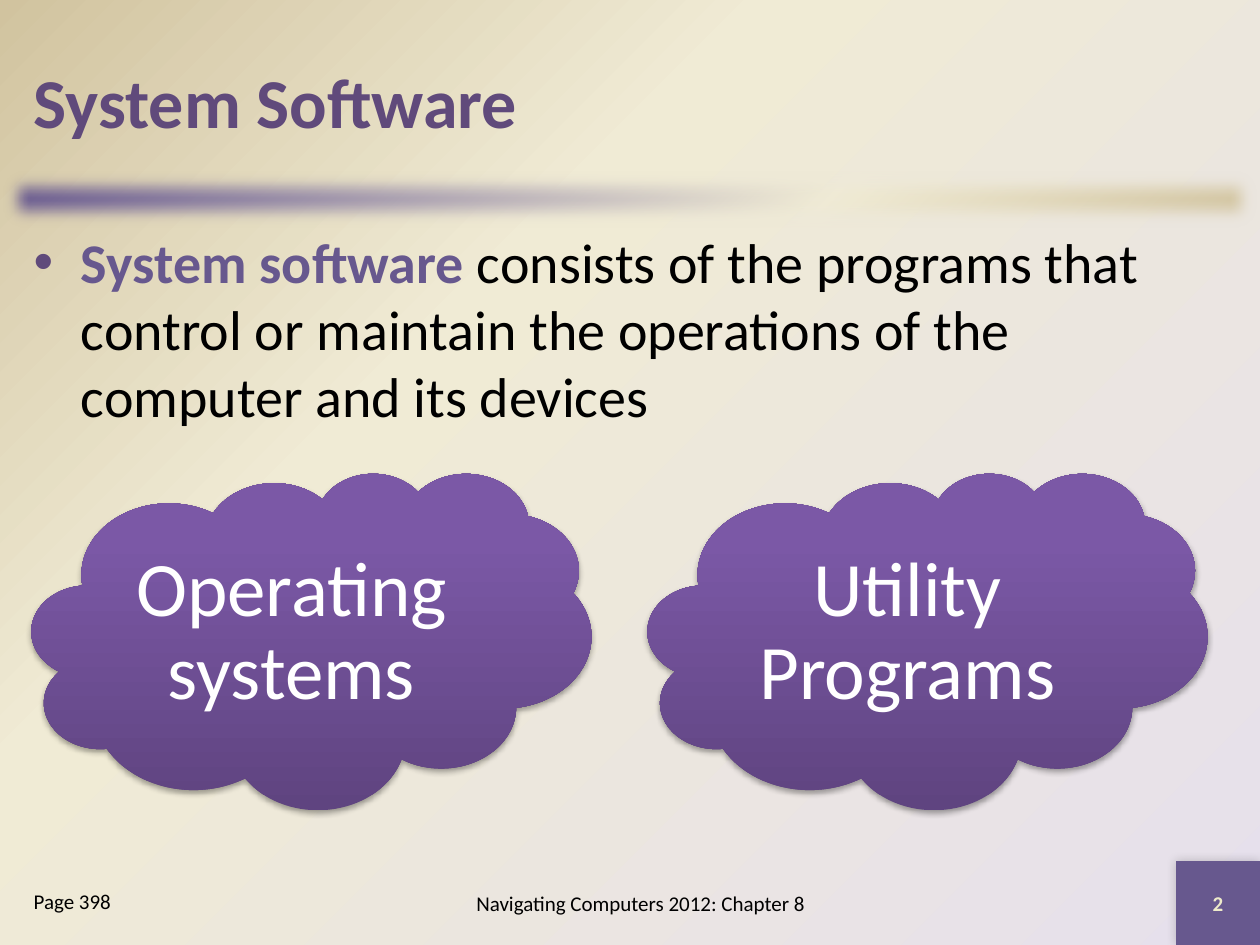
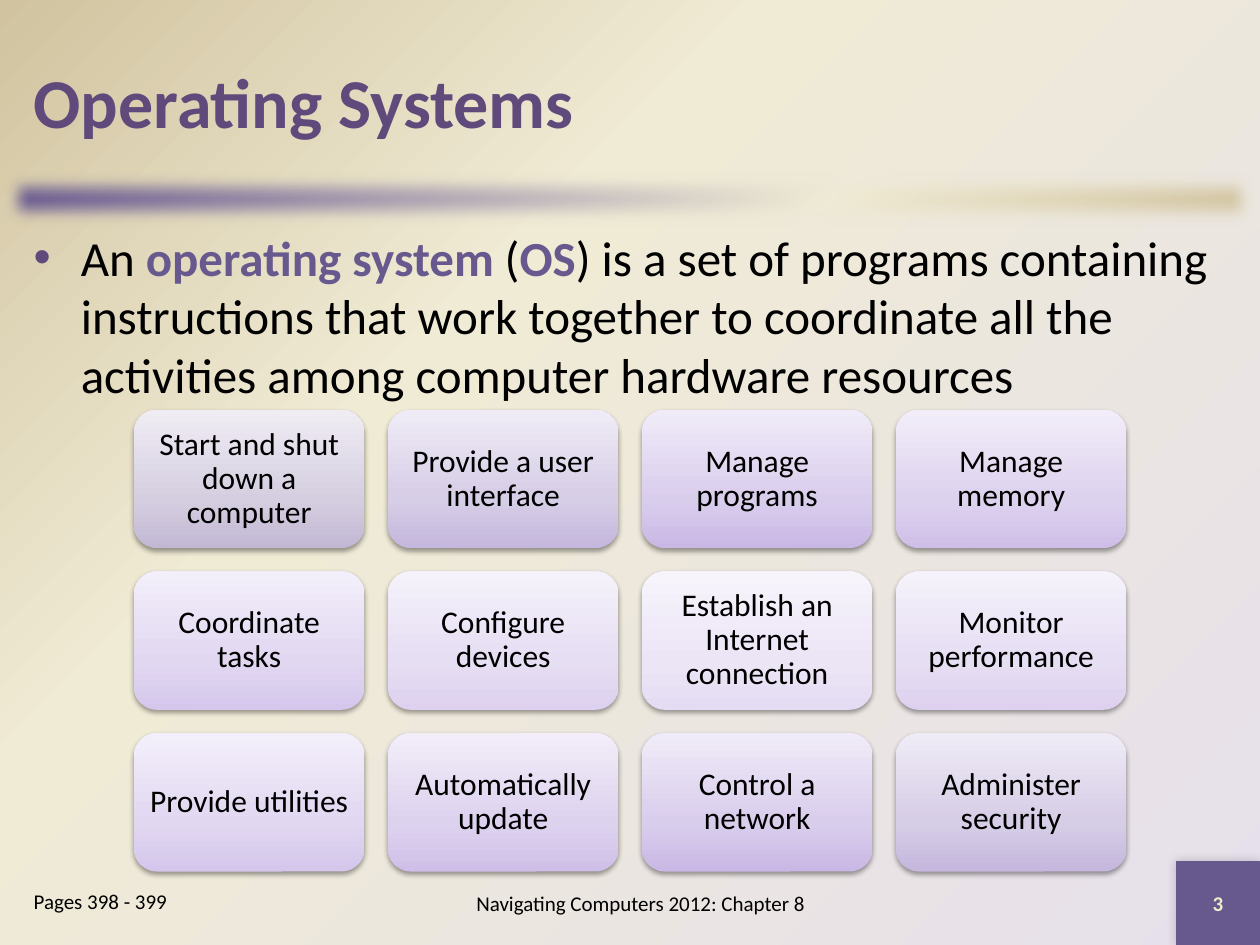
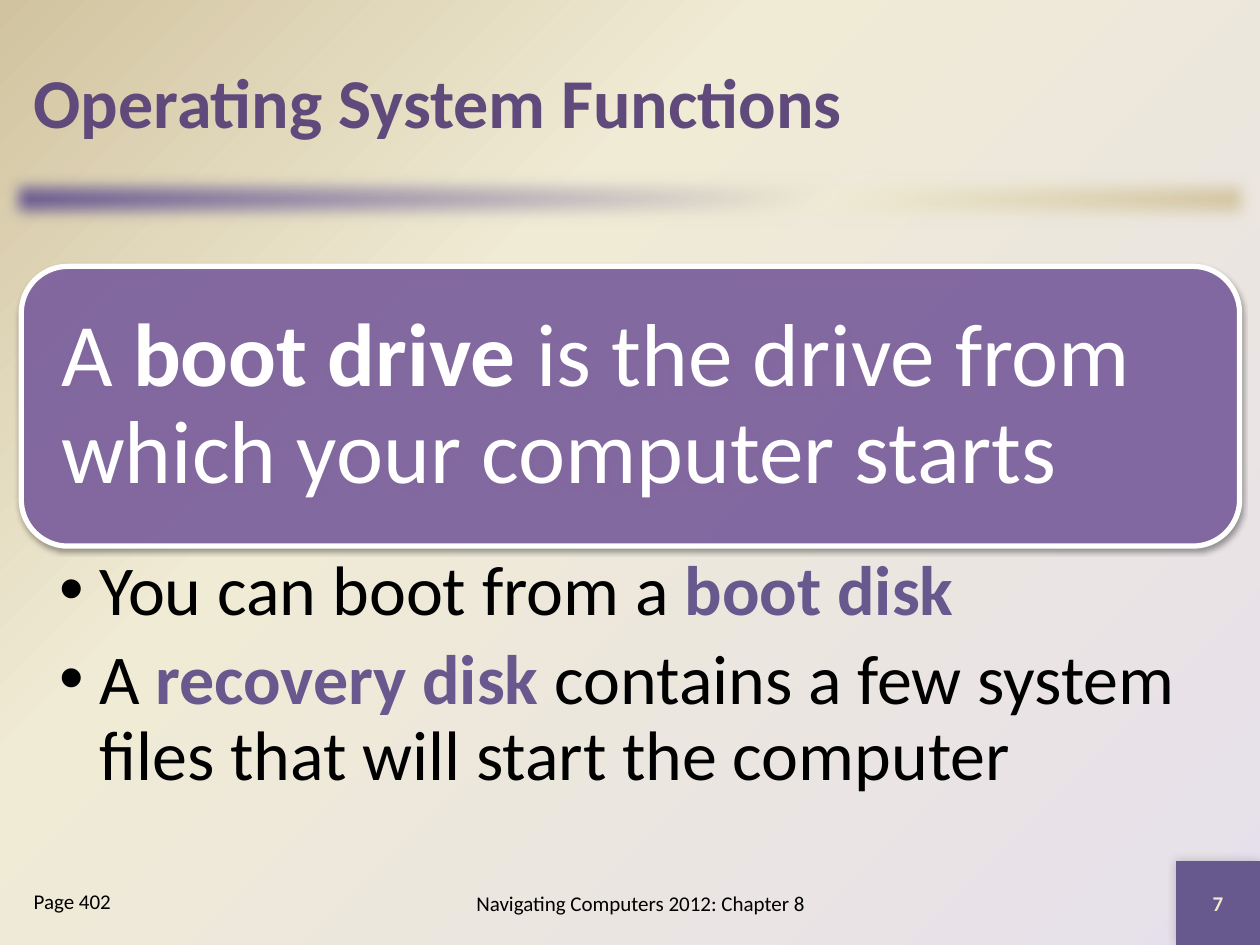
from dataclasses import dataclass
from typing import Optional

import lxml.etree
import pptx
import pptx.dml.color
import pptx.dml.fill
import pptx.enum.shapes
import pptx.enum.text
import pptx.oxml
import pptx.oxml.ns
import pptx.presentation
import pptx.shapes.autoshape
import pptx.shapes.base
import pptx.slide
import pptx.util

Cm = pptx.util.Cm
Pt = pptx.util.Pt
PRESET = pptx.enum.shapes.MSO_SHAPE
ALIGN = pptx.enum.text.PP_ALIGN
ANCHOR = pptx.enum.text.MSO_ANCHOR

FONT = "Calibri"
BLACK, WHITE, CREAM = "000000", "FFFFFF", "EEEBCA"
TITLE_PURPLE, ACCENT, PANEL_PURPLE = "604A7B", "67588E", "8064A2"
FOOTER = "Navigating Computers 2012: Chapter 8"
UPWARD = 270


@dataclass(frozen=True)
class Box:
    """Place and size in centimetres."""
    left: float
    top: float
    width: float
    height: float

    def lengths(self) -> tuple:
        return Cm(self.left), Cm(self.top), Cm(self.width), Cm(self.height)


@dataclass(frozen=True)
class Span:
    text: str
    color: Optional[str] = None
    bold: Optional[bool] = None


@dataclass(frozen=True)
class Bullet:
    color: str
    indent: float


@dataclass(frozen=True)
class Shadow:
    """Blur and distance in points, opacity in percent, direction in degrees."""
    opacity: int
    blur: float
    distance: float
    direction: int


TITLE_BOX = Box(0.43, 0.43, 24.56, 3.18)
BAND_BOX = Box(0, 3.38, 25.4, 1.27)
NUMBER_BOX = Box(23.71, 17.36, 1.69, 1.69)
BODY_BOX = Box(0.43, 4.45, 24.56, 12.9)
FOOTER_BOX = Box(7.62, 17.58, 10.59, 1.27)
PAGES_BOX = Box(0.43, 17.78, 4.65, 1.27)

BACKDROP = [(0, "E6E0EC"), (65, "F0EBD5"), (100, "D1C39F")]
BAND = [(0, ACCENT), (65, "F0EBD5"), (100, "D1C39F")]
CLOUD = [(0, "5F4480"), (80, "7B58A6"), (100, "7C57A8")]
CARD_TONES = [
    ("C3B8D4", "D5CEE0", "EFECF3"),
    ("C5B7DD", "D6CDE6", "EFEBF6"),
    ("C9B8E5", "D9CDEC", "F0EBF8"),
    ("CFBFE8", "DDD2EE", "F2EDF9"),
    ("D5C7EC", "E1D7F1", "F3EFFA"),
    ("DDD1EF", "E6DEF3", "F5F2FB"),
    ("E4DCF2", "ECE5F6", "F7F4FC"),
]
TASKS = [
    "Start and shut down a computer", "Provide a user interface",
    "Manage programs", "Manage memory",
    "Coordinate tasks", "Configure devices",
    "Establish an Internet connection", "Monitor performance",
    "Provide utilities", "Automatically update",
    "Control a network", "Administer security",
]

CORNER_SHADOW = Shadow(20, 6, 0, 225)
CLOUD_SHADOW = Shadow(35, 3.1, 1.8, 90)
CARD_SHADOW = Shadow(38, 3.1, 1.6, 90)


def rgb(color: str) -> pptx.dml.color.RGBColor:
    return pptx.dml.color.RGBColor.from_string(color)


def drawing_xml(markup: str) -> lxml.etree._Element:
    """Make one DrawingML element from markup with the prefix a."""
    namespace = pptx.oxml.ns.nsdecls("a")
    return pptx.oxml.parse_xml(f"<a:wrapper {namespace}>{markup}</a:wrapper>")[0]


def find(element: lxml.etree._Element, tag: str) -> lxml.etree._Element:
    return element.find(".//" + pptx.oxml.ns.qn(tag))


def paint_gradient(owner: lxml.etree._Element, fill: pptx.dml.fill.FillFormat,
                   stops: list, angle: Optional[int] = None) -> None:
    """Linear at the angle, or circular from the lower right corner without one."""
    fill.gradient()
    gradient = find(owner, "a:gradFill")
    for child in list(gradient):
        gradient.remove(child)
    marks = "".join(f'<a:gs pos="{place * 1000}"><a:srgbClr val="{color}"/></a:gs>'
                    for place, color in stops)
    gradient.append(drawing_xml(f"<a:gsLst>{marks}</a:gsLst>"))
    if angle is None:
        gradient.append(drawing_xml(
            '<a:path path="circle"><a:fillToRect l="100000" t="100000"/></a:path>'))
    else:
        gradient.append(drawing_xml(f'<a:lin ang="{angle * 60000}" scaled="0"/>'))


def cast_shadow(shape: pptx.shapes.autoshape.Shape, shadow: Shadow) -> None:
    find(shape.element, "a:effectLst").append(drawing_xml(
        f'<a:outerShdw blurRad="{Pt(shadow.blur)}" dist="{Pt(shadow.distance)}" '
        f'dir="{shadow.direction * 60000}" algn="ctr" rotWithShape="0">'
        f'<a:srgbClr val="{BLACK}"><a:alpha val="{shadow.opacity * 1000}"/></a:srgbClr>'
        "</a:outerShdw>"))


def add_preset(page: pptx.slide.Slide, preset: PRESET, box: Box, *,
               fill: Optional[str] = None, stops: Optional[list] = None,
               angle: int = UPWARD, line: Optional[str] = None, line_width: float = 1,
               shadow: Optional[Shadow] = None) -> pptx.shapes.autoshape.Shape:
    shape = page.shapes.add_shape(preset, *box.lengths())
    shape.shadow.inherit = False
    if stops:
        paint_gradient(shape.element, shape.fill, stops, angle)
    else:
        shape.fill.solid()
        shape.fill.fore_color.rgb = rgb(fill)
    if line:
        shape.line.color.rgb = rgb(line)
        shape.line.width = Pt(line_width)
    else:
        shape.line.fill.background()
    if shadow:
        cast_shadow(shape, shadow)
    return shape


def write_text(shape: pptx.shapes.base.BaseShape, *paragraphs: list, size: float,
               color: str = BLACK, bold: bool = False, align: ALIGN = ALIGN.LEFT,
               anchor: ANCHOR = ANCHOR.TOP, insets: tuple = (0.25, 0.13, 0.25, 0.13),
               line_spacing: float = 1.0, space_after: float = 0,
               bullet: Optional[Bullet] = None) -> None:
    """Fill a shape with paragraphs, each a list of spans."""
    frame = shape.text_frame
    frame.word_wrap = True
    frame.auto_size = pptx.enum.text.MSO_AUTO_SIZE.NONE
    frame.vertical_anchor = anchor
    (frame.margin_left, frame.margin_top,
     frame.margin_right, frame.margin_bottom) = map(Cm, insets)
    for index, spans in enumerate(paragraphs):
        para = frame.add_paragraph() if index else frame.paragraphs[0]
        para.alignment = align
        para.line_spacing = line_spacing
        para.space_after = Pt(space_after)
        if bullet:
            properties = para._p.get_or_add_pPr()
            properties.set("marL", str(Cm(bullet.indent)))
            properties.set("indent", str(-Cm(bullet.indent)))
            for markup in (f'<a:buClr><a:srgbClr val="{bullet.color}"/></a:buClr>',
                           '<a:buFont typeface="Arial"/>', '<a:buChar char="•"/>'):
                properties.append(drawing_xml(markup))
        for span in spans:
            run = para.add_run()
            run.text = span.text
            run.font.name = FONT
            run.font.size = Pt(size)
            run.font.bold = bold if span.bold is None else span.bold
            run.font.color.rgb = rgb(span.color or color)


def add_text(page: pptx.slide.Slide, box: Box, *paragraphs: list, **style) -> None:
    write_text(page.shapes.add_textbox(*box.lengths()), *paragraphs, **style)


def term(text: str) -> Span:
    """A key term, bold in the accent colour."""
    return Span(text, ACCENT, True)


def add_page(deck: pptx.presentation.Presentation, layout: pptx.slide.SlideLayout,
             title: str, number: int, pages: str) -> pptx.slide.Slide:
    page = deck.slides.add_slide(layout)
    heading = page.shapes.title
    heading.left, heading.top, heading.width, heading.height = TITLE_BOX.lengths()
    write_text(heading, [Span(title)], size=40, color=TITLE_PURPLE, bold=True,
               anchor=ANCHOR.MIDDLE)
    add_text(page, FOOTER_BOX, [Span(FOOTER)], size=12, align=ALIGN.CENTER,
             anchor=ANCHOR.MIDDLE)
    add_text(page, NUMBER_BOX, [Span(str(number))], size=12, color=CREAM, bold=True,
             align=ALIGN.CENTER, anchor=ANCHOR.MIDDLE)
    add_text(page, PAGES_BOX, [Span(pages)], size=12)
    return page


def decorate_layout(page: pptx.slide.Slide) -> None:
    """Draw the band and the number tile, then move them to the shared layout."""
    band = add_preset(page, PRESET.RECTANGLE, BAND_BOX, stops=BAND, angle=45)
    find(band.element, "a:effectLst").append(drawing_xml(f'<a:softEdge rad="{Pt(10)}"/>'))
    tile = add_preset(page, PRESET.RECTANGLE, NUMBER_BOX, fill=ACCENT, shadow=CORNER_SHADOW)
    for shape in (band, tile):
        page.slide_layout.shapes.element.append(shape.element)


def fill_system_software(page: pptx.slide.Slide) -> None:
    add_text(page, BODY_BOX, [
        term("System software "),
        Span("consists of the programs that control or maintain the operations "
             "of the computer and its devices"),
    ], size=32, bullet=Bullet(TITLE_PURPLE, 0.95))
    for column, name in enumerate(["Operating systems", "Utility Programs"]):
        cloud = add_preset(page, PRESET.CLOUD, Box(0.64 + 12.42 * column, 9.53, 11.28, 6.78),
                           stops=CLOUD, shadow=CLOUD_SHADOW)
        write_text(cloud, [Span(name)], size=44, color=WHITE, align=ALIGN.CENTER,
                   anchor=ANCHOR.MIDDLE, line_spacing=0.9, insets=(0.46,) * 4)


def fill_operating_systems(page: pptx.slide.Slide) -> None:
    add_text(page, BODY_BOX, [
        Span("An "), term("operating system "), Span("("), term("OS"),
        Span(") is a set of programs containing instructions that work together "
             "to coordinate all the activities among computer hardware resources"),
    ], size=28, bullet=Bullet(TITLE_PURPLE, 0.95))
    lightest = len(CARD_TONES) - 1
    for index, task in enumerate(TASKS):
        row, column = divmod(index, 4)
        tones = CARD_TONES[lightest - abs(lightest - index)]
        card = add_preset(page, PRESET.ROUNDED_RECTANGLE,
                          Box(2.7 + 5.12 * column, 8.26 + 3.26 * row, 4.65, 2.79),
                          stops=list(zip((0, 35, 100), tones)), shadow=CARD_SHADOW)
        write_text(card, [Span(task)], size=18, align=ALIGN.CENTER, anchor=ANCHOR.MIDDLE,
                   line_spacing=0.9, insets=(0.18,) * 4)


def fill_functions(page: pptx.slide.Slide) -> None:
    panel = add_preset(page, PRESET.ROUNDED_RECTANGLE, Box(0.43, 5.37, 24.56, 5.64),
                       fill=PANEL_PURPLE, line=WHITE, line_width=3, shadow=CARD_SHADOW)
    find(panel.element, "a:srgbClr").append(drawing_xml('<a:alpha val="90000"/>'))
    write_text(panel, [
        Span("A "), Span("boot drive", bold=True),
        Span(" is the drive from which your computer starts"),
    ], size=51, color=WHITE, anchor=ANCHOR.MIDDLE, line_spacing=0.9, insets=(0.53,) * 4)
    add_text(page, Box(0.43, 11, 24.56, 5.44),
             [Span("You can boot from a "), term("boot disk")],
             [Span("A "), term("recovery disk "),
              Span("contains a few system files that will start the computer")],
             size=40, line_spacing=0.9, space_after=8, insets=(0.78, 0.18, 1.02, 0.18),
             bullet=Bullet(BLACK, 0.79))


def main() -> None:
    deck = pptx.Presentation()
    deck.slide_width, deck.slide_height = Cm(25.4), Cm(19.05)
    master = deck.slide_master
    paint_gradient(master.element, master.background.fill, BACKDROP)
    layout = deck.slide_layouts.get_by_name("Title Only")

    software = add_page(deck, layout, "System Software", 2, "Page 398")
    decorate_layout(software)
    fill_system_software(software)
    fill_operating_systems(add_page(deck, layout, "Operating Systems", 3, "Pages 398 - 399"))
    fill_functions(add_page(deck, layout, "Operating System Functions", 7, "Page 402"))
    deck.save("out.pptx")


if __name__ == "__main__":
    main()
